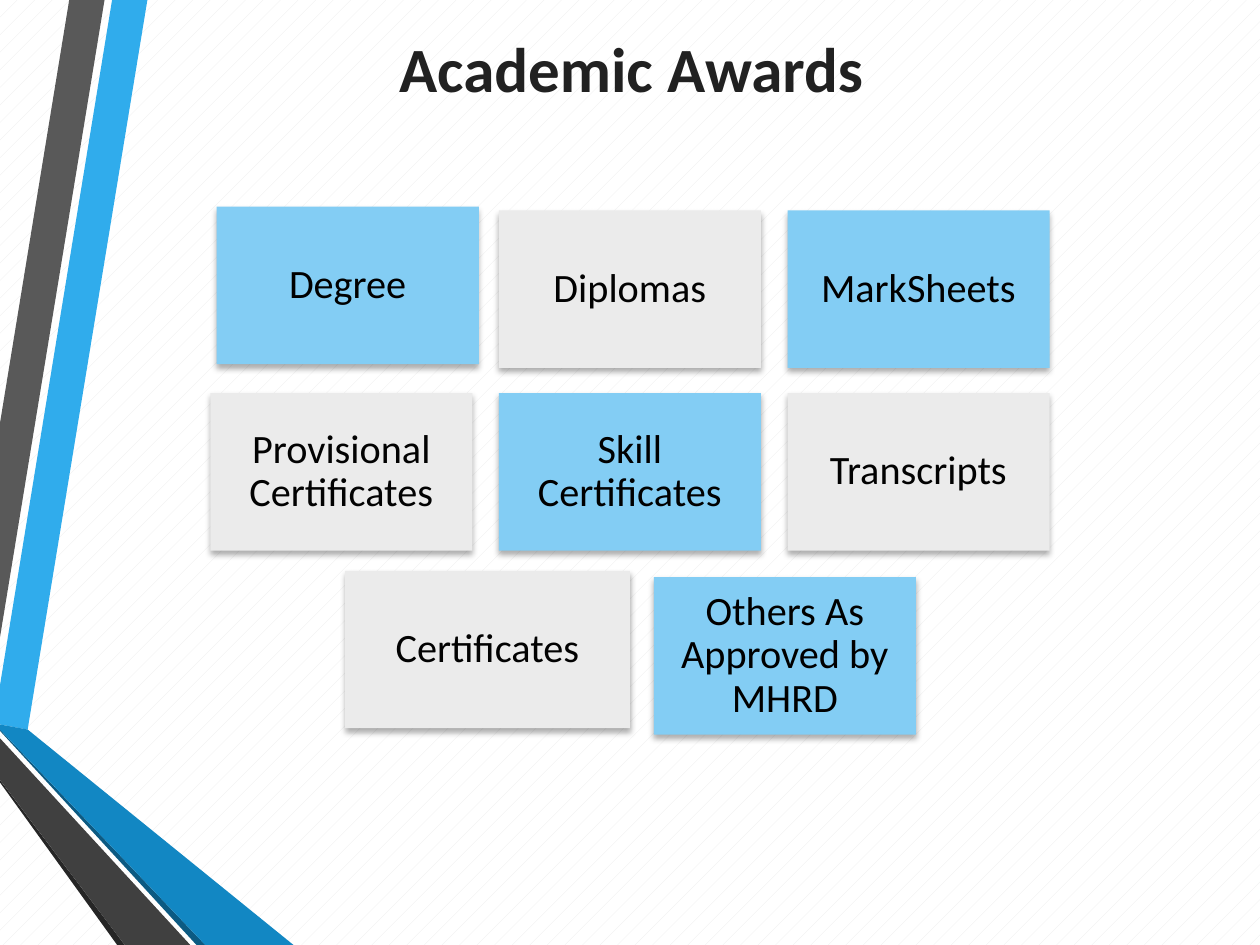
from lxml import etree
from pptx import Presentation
from pptx.dml.color import RGBColor
from pptx.enum import dml, shapes, text
from pptx.oxml import ns
from pptx.util import Inches, Pt

COLORS = {
    "white": "FFFFFF", "pale": "EBEBEB", "sky": "83CDF4",
    "title": "212121", "on_sky": "000000", "on_pale": "020202",
    "bright": "30ACEC", "blue": "1287C3", "deep": "0C5A82",
    "gray": "595959", "dark": "404040", "black": "262626",
}
FONT = "Calibri"
CARD_W, CARD_H = 2.08, 1.25

# Ribbon outlines, in inches from the corner of the page
RIBBONS = [
    ("bright", [(0, 5.44), (0, 5.75), (0.22, 5.79), (1.17, 0), (0.89, 0)]),
    ("gray", [(0.83, 0), (0.55, 0), (0, 3.36), (0, 5.06)]),
    ("black", [(0, 6.19), (0, 6.21), (0.93, 7.5), (0.99, 7.5)]),
    ("deep", [(0, 5.79), (0, 5.8), (1.56, 7.5), (1.63, 7.5)]),
    ("blue", [(0, 5.79), (1.63, 7.5), (2.33, 7.5), (0.22, 5.79), (0, 5.75)]),
    ("dark", [(0, 6.19), (0.99, 7.5), (1.51, 7.5), (0, 5.86)]),
]

# Award cards: label, left, top, width; the colours alternate
AWARDS = [
    ("Degree", 1.72, 1.64, CARD_W),
    ("Diplomas", 3.96, 1.67, CARD_W),
    ("MarkSheets", 6.25, 1.67, CARD_W),
    ("Provisional Certificates", 1.67, 3.12, CARD_W),
    ("Skill Certificates", 3.96, 3.12, CARD_W),
    ("Transcripts", 6.25, 3.12, CARD_W),
    ("Certificates", 2.74, 4.53, 2.26),
    ("Others As Approved by MHRD", 5.19, 4.58, CARD_W),
]


def rgb(name):
    return RGBColor.from_string(COLORS[name])


def paint(shape, color):
    shape.shadow.inherit = False
    shape.fill.solid()
    shape.fill.fore_color.rgb = rgb(color)
    shape.line.fill.background()


def write(shape, words, size, color, bold=False):
    frame = shape.text_frame
    frame.word_wrap = True
    frame.auto_size = text.MSO_AUTO_SIZE.NONE
    frame.vertical_anchor = text.MSO_ANCHOR.MIDDLE
    para = frame.paragraphs[0]
    para.alignment = text.PP_ALIGN.CENTER
    span = para.add_run()
    span.text = words
    span.font.name = FONT
    span.font.size = Pt(size)
    span.font.bold = bold
    span.font.color.rgb = rgb(color)
    return frame


def add_soft_shadow(shape):
    effects = shape._element.spPr.find(ns.qn("a:effectLst"))
    shadow = etree.SubElement(
        effects, ns.qn("a:outerShdw"), blurRad=str(Pt(3.5)),
        dist=str(Pt(2.2)), dir="5400000", rotWithShape="0")
    tint = etree.SubElement(shadow, ns.qn("a:srgbClr"), val="000000")
    etree.SubElement(tint, ns.qn("a:alpha"), val="32000")


def add_background(page):
    fill = page.background.fill
    fill.patterned()
    fill.pattern = dml.MSO_PATTERN.PERCENT_5
    fill.fore_color.rgb = rgb("pale")
    fill.back_color.rgb = rgb("white")


def add_ribbons(page):
    for color, outline in RIBBONS:
        points = [(Inches(x), Inches(y)) for x, y in outline]
        builder = page.shapes.build_freeform(*points[0])
        builder.add_line_segments(points[1:], close=True)
        paint(builder.convert_to_shape(), color)


def add_title(page, left, top, width, height):
    title = page.shapes.title
    title.left, title.top = Inches(left), Inches(top)
    title.width, title.height = Inches(width), Inches(height)
    write(title, "Academic Awards", 36, "title", bold=True)


def add_card(page, label, color, left, top, width, height):
    box = page.shapes.add_shape(
        shapes.MSO_SHAPE.RECTANGLE,
        Inches(left), Inches(top), Inches(width), Inches(height))
    paint(box, color)
    add_soft_shadow(box)
    frame = write(box, label, 23, "on_" + color)
    frame.margin_left = frame.margin_right = Inches(0.1)
    frame.margin_top = frame.margin_bottom = Inches(0.1)
    frame.paragraphs[0].line_spacing = 0.9


def add_awards(page):
    for i, (label, left, top, width) in enumerate(AWARDS):
        color = "pale" if i % 2 else "sky"
        if i >= 6:  # the last row starts with a pale card
            color = "pale" if i == 6 else "sky"
        add_card(page, label, color, left, top, width, CARD_H)


def main():
    deck = Presentation()
    deck.slide_width, deck.slide_height = Inches(10), Inches(7.5)
    page = deck.slides.add_slide(deck.slide_layouts[5])
    add_background(page)
    add_ribbons(page)
    add_title(page, 0.51, 0, 9, 1.07)
    add_awards(page)
    deck.save("out.pptx")


if __name__ == "__main__":
    main()
